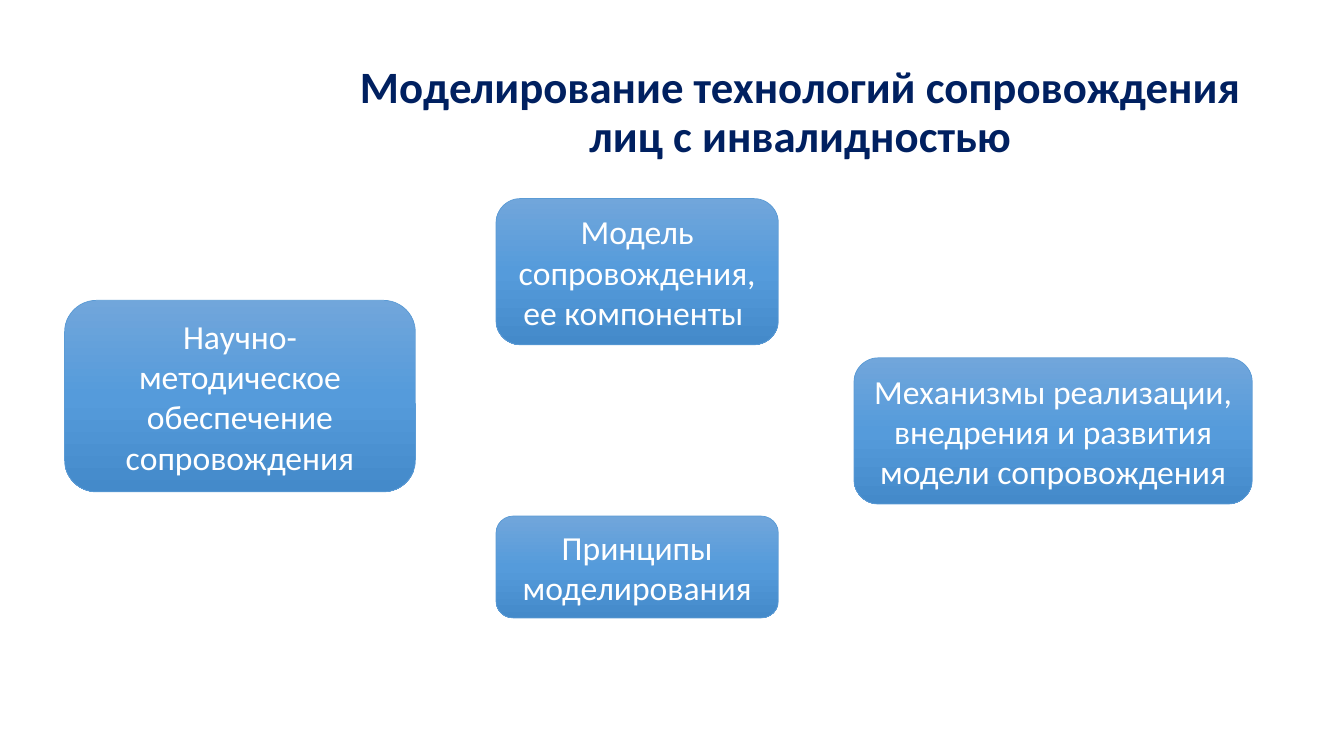
from copy import deepcopy
from dataclasses import dataclass

from pptx import Presentation
from pptx.dml.color import RGBColor
from pptx.enum.shapes import MSO_SHAPE
from pptx.enum.text import MSO_ANCHOR, MSO_AUTO_SIZE, PP_ALIGN
from pptx.oxml.ns import qn
from pptx.shapes.autoshape import Shape
from pptx.slide import Slide
from pptx.text.text import TextFrame
from pptx.util import Inches, Pt

FONT = "Calibri"
GRADIENT = [(0, "71A6DB"), (0.5, "559BDB"), (1, "448ACA")]


@dataclass
class Topic:
    text: str
    left: float
    top: float
    width: float
    height: float


TITLE = Topic("Моделирование технологий сопровождения лиц с инвалидностью", 3.46, 0.4, 8.96, 1.45)
TOPICS = [
    Topic("Научно-методическое обеспечение сопровождения", 0.64, 2.98, 3.48, 1.9),
    Topic("Модель сопровождения, ее компоненты ", 4.92, 1.97, 2.8, 1.45),
    Topic("Механизмы реализации, внедрения и развития модели сопровождения", 8.47, 3.55, 3.95, 1.45),
    Topic("Принципы моделирования", 4.92, 5.12, 2.8, 1.01),
]


def color(value: str) -> RGBColor:
    return RGBColor.from_string(value)


def write_text(frame: TextFrame, text: str, size: float, text_color: str, bold: bool) -> None:
    frame.text = text
    frame.word_wrap = True
    frame.vertical_anchor = MSO_ANCHOR.MIDDLE
    para = frame.paragraphs[0]
    para.alignment = PP_ALIGN.CENTER
    para.font.name = FONT
    para.font.size = Pt(size)
    para.font.bold = bold
    para.font.color.rgb = color(text_color)


def fill_gradient(box: Shape) -> None:
    box.fill.gradient()
    box.fill.gradient_angle = 270
    stop_list = box.element.spPr.find(qn("a:gradFill")).find(qn("a:gsLst"))
    stop_list.append(deepcopy(stop_list[0]))
    for stop, (position, stop_color) in zip(box.fill.gradient_stops, GRADIENT):
        stop.position = position
        stop.color.rgb = color(stop_color)


def add_title(page: Slide, title: Topic) -> None:
    box = page.shapes.title
    box.left, box.top = Inches(title.left), Inches(title.top)
    box.width, box.height = Inches(title.width), Inches(title.height)
    write_text(box.text_frame, title.text, 32, "002060", True)
    box.text_frame.auto_size = MSO_AUTO_SIZE.NONE
    box.text_frame.paragraphs[0].line_spacing = 0.9


def add_topic(page: Slide, topic: Topic) -> None:
    box = page.shapes.add_shape(
        MSO_SHAPE.ROUNDED_RECTANGLE,
        Inches(topic.left), Inches(topic.top), Inches(topic.width), Inches(topic.height),
    )
    box.shadow.inherit = False
    fill_gradient(box)
    box.line.color.rgb = color("5B9BD5")
    box.line.width = Pt(0.5)
    write_text(box.text_frame, topic.text, 24, "FFFFFF", False)
    box.text_frame.auto_size = MSO_AUTO_SIZE.SHAPE_TO_FIT_TEXT


def main() -> None:
    deck = Presentation()
    deck.slide_width, deck.slide_height = Inches(13.33), Inches(7.5)
    page = deck.slides.add_slide(deck.slide_layouts.get_by_name("Title Only"))
    add_title(page, TITLE)
    for topic in TOPICS:
        add_topic(page, topic)
    deck.save("out.pptx")


if __name__ == "__main__":
    main()
